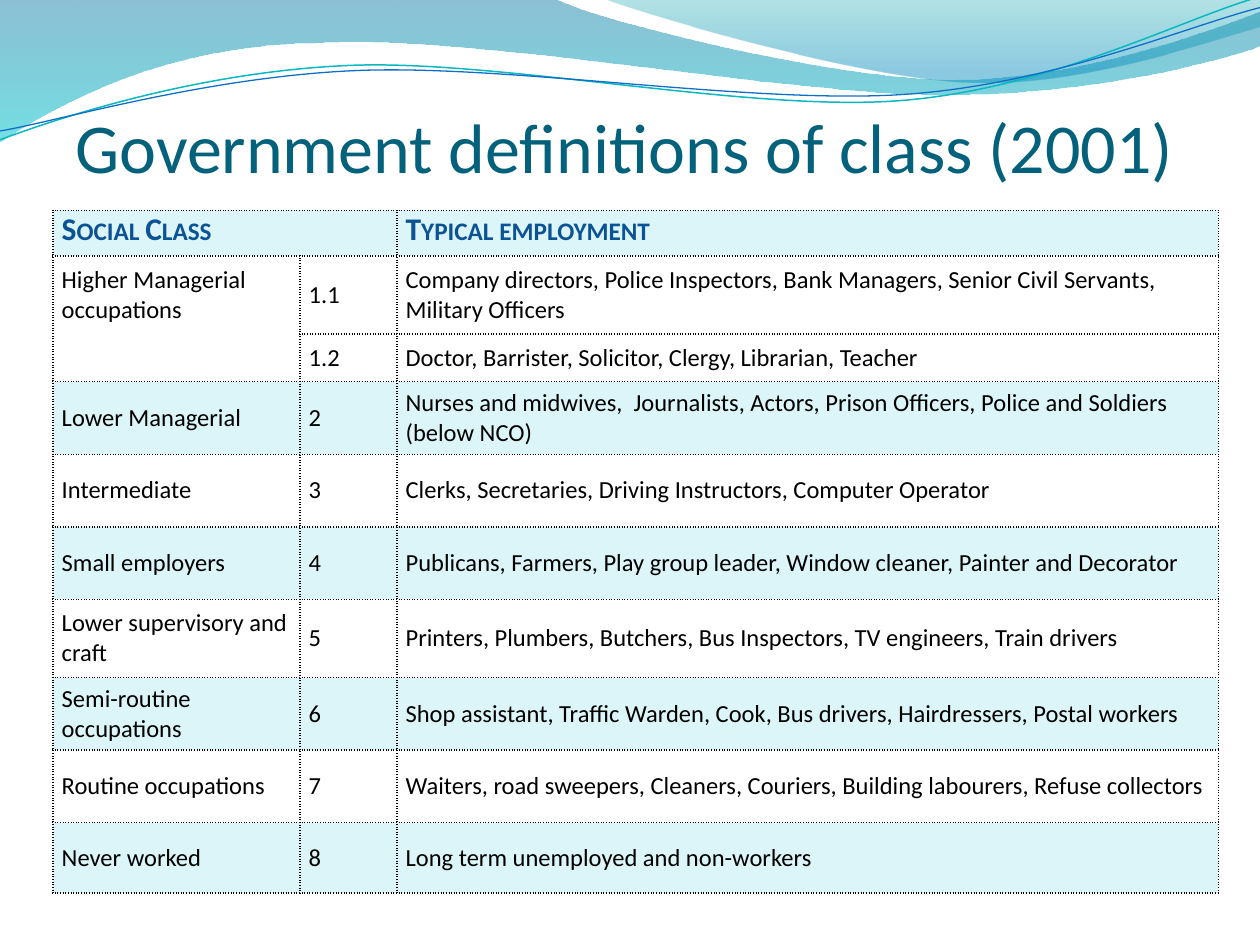
from math import cos, radians, sin

from lxml import etree
from pptx import Presentation
from pptx.dml.color import RGBColor
from pptx.enum.text import MSO_ANCHOR
from pptx.oxml.ns import qn
from pptx.util import Inches, Pt

BOTTOM, MIDDLE, TOP = MSO_ANCHOR.BOTTOM, MSO_ANCHOR.MIDDLE, MSO_ANCHOR.TOP
FONT = "Calibri"
TITLE_COLOR, HEADER_COLOR, BODY_COLOR = "04617B", "0B5394", "000000"
BAND_COLOR = "DBF5F9"

COLUMNS = [1.96, 0.77, 6.52]
STANDARD_ROW = 2.88 / 5
ROW_HEIGHTS = [0.36, 0.62, 0.38, *[STANDARD_ROW] * 3, 0.62, *[STANDARD_ROW] * 2, 0.56]
BANDED_ROWS = {0, 3, 5, 7, 9}
CLASSES = [
    ("Social Class", "", "Typical employment"),
    ("Higher Managerial occupations", "1.1",
     "Company directors, Police Inspectors, Bank Managers, Senior Civil Servants, Military Officers"),
    ("", "1.2", "Doctor, Barrister, Solicitor, Clergy, Librarian, Teacher"),
    ("Lower Managerial", "2",
     "Nurses and midwives,  Journalists, Actors, Prison Officers, Police and Soldiers (below NCO)"),
    ("Intermediate", "3", "Clerks, Secretaries, Driving Instructors, Computer Operator"),
    ("Small employers", "4",
     "Publicans, Farmers, Play group leader, Window cleaner, Painter and Decorator"),
    ("Lower supervisory and craft", "5",
     "Printers, Plumbers, Butchers, Bus Inspectors, TV engineers, Train drivers"),
    ("Semi-routine occupations", "6",
     "Shop assistant, Traffic Warden, Cook, Bus drivers, Hairdressers, Postal workers"),
    ("Routine occupations", "7",
     "Waiters, road sweepers, Cleaners, Couriers, Building labourers, Refuse collectors"),
    ("Never worked", "8", "Long term unemployed and non-workers"),
]
# Sides left open, so that neighbouring cells read as one
OPEN_SIDES = {(0, 0): "R", (0, 1): "L", (1, 0): "B", (2, 0): "T"}

# Each outline is a start point followed by straight (1 point) or cubic (3 points) steps
LEFT_WAVE = [
    [(0, -0.01)], [(4.4, -0.01)],
    [(4.76, 0.17), (6.64, 0.63), (7.58, 0.63)],
    [(8.53, 0.63), (9.58, 0.26), (10, 0.09)],
    [(10.01, 0.36)],
    [(9.83, 0.44), (8.7, 0.76), (7.46, 0.75)],
    [(6.22, 0.75), (3.82, 0.28), (2.57, 0.34)],
    [(1.29, 0.35), (0.46, 0.83), (-0.01, 1.13)],
    [(0, -0.01)],
]
RIGHT_WAVE = [
    [(4.79, -0.01)],
    [(5.09, 0.11), (6.82, 0.62), (7.69, 0.65)],
    [(8.56, 0.69), (9.61, 0.32), (10, 0.21)],
    [(10, 0)], [(4.79, -0.01)],
]
TEAL_LINE = [
    [(0, 1.11)],
    [(0.48, 0.93), (1.58, 0.57), (2.77, 0.52)],
    [(3.95, 0.47), (5.93, 0.89), (7.13, 0.8)],
    [(8.33, 0.71), (9.38, 0.15), (9.98, -0.02)],
]
BLUE_LINE = [
    [(0, 1.04)],
    [(0.47, 0.96), (1.64, 0.61), (2.83, 0.56)],
    [(4.03, 0.51), (5.97, 0.83), (7.17, 0.75)],
    [(8.36, 0.67), (9.41, 0.21), (10, 0.06)],
]
LINE_TILT = -2.7


def rgb(hex_color):
    return RGBColor.from_string(hex_color)


def turn(point, center, degrees):
    c, s = cos(radians(degrees)), sin(radians(degrees))
    dx, dy = point[0] - center[0], point[1] - center[1]
    return center[0] + dx * c - dy * s, center[1] + dx * s + dy * c


def add_outline(slide, box, outline, close, tilt=0):
    """Draw straight and cubic steps in a box that is tilted about its middle."""
    left, top, width, height = box
    right, bottom = left + width, top + height
    builder = slide.shapes.build_freeform(Inches(left), Inches(top), scale=1.0)
    builder.add_line_segments(
        [(Inches(x), Inches(y)) for x, y in ((right, top), (right, bottom), (left, bottom))])
    shape = builder.convert_to_shape()
    shape.shadow.inherit = False
    shape.rotation = tilt % 360

    route = next(shape._element.iter(qn("a:path")))
    for corner in list(route):
        route.remove(corner)
    center = (left + width / 2, top + height / 2)
    for i, step in enumerate(outline):
        kind = "moveTo" if i == 0 else "lnTo" if len(step) == 1 else "cubicBezTo"
        segment = etree.SubElement(route, qn(f"a:{kind}"))
        for point in step:
            x, y = turn(point, center, -tilt)
            etree.SubElement(segment, qn("a:pt"),
                             x=str(Inches(x - left)), y=str(Inches(y - top)))
    if close:
        etree.SubElement(route, qn("a:close"))
    return shape


def add_wave(slide, box, outline, stops):
    wave = add_outline(slide, box, outline, close=True)
    wave.line.fill.background()
    wave.fill.gradient()
    wave.fill.gradient_angle = 270
    for stop, (position, color, _) in zip(wave.fill.gradient_stops, stops):
        stop.position = position
        stop.color.rgb = rgb(color)
    colors = wave._element.spPr.iter(qn("a:srgbClr"))
    for element, (_, _, opacity) in zip(colors, stops):
        etree.SubElement(element, qn("a:alpha"), val=str(opacity * 1000))


def add_wave_line(slide, box, outline, color, width):
    curve = add_outline(slide, box, outline, close=False, tilt=LINE_TILT)
    curve.fill.background()
    curve.line.color.rgb = rgb(color)
    curve.line.width = Pt(width)


def add_wave_header(slide):
    add_wave(slide, (-0.01, -0.01, 10.02, 1.14), LEFT_WAVE,
             [(0, "0074A1", 45), (1, "00C6CF", 55)])
    add_wave(slide, (4.79, -0.01, 5.21, 0.7), RIGHT_WAVE,
             [(0, "00A1A9", 30), (0.8, "008BBF", 45)])
    add_wave_line(slide, (-0.02, 0.22, 10.02, 0.71), TEAL_LINE, "0AB8BF", 0.85)
    add_wave_line(slide, (-0.02, 0.3, 10.03, 0.58), BLUE_LINE, "0F6FC6", 0.75)


def style_text(paragraph, size, color, bold=False):
    for run in paragraph.runs:
        run.font.name = FONT
        run.font.size = Pt(size)
        run.font.bold = bold
        run.font.color.rgb = rgb(color)


def add_title(slide, left, top, width, height):
    box = slide.shapes.add_textbox(*map(Inches, (left, top, width, height)))
    frame = box.text_frame
    frame.word_wrap = True
    frame.vertical_anchor = BOTTOM
    frame.margin_left = frame.margin_right = frame.margin_bottom = 0
    frame.margin_top = Inches(0.05)
    frame.text = "Government definitions of class (2001)"
    style_text(frame.paragraphs[0], 40, TITLE_COLOR)


def set_borders(cell, open_side):
    properties = cell._tc.get_or_add_tcPr()
    for side in "LRTB":
        border = etree.SubElement(properties, qn(f"a:ln{side}"), w=str(Pt(1)))
        if side == open_side:
            etree.SubElement(border, qn("a:noFill"))
            continue
        fill = etree.SubElement(border, qn("a:solidFill"))
        etree.SubElement(fill, qn("a:srgbClr"), val=BODY_COLOR)
        etree.SubElement(border, qn("a:prstDash"), val="sysDot")


def fill_cell(cell, text, is_header, is_banded, open_side):
    set_borders(cell, open_side)
    if is_banded:
        cell.fill.solid()
        cell.fill.fore_color.rgb = rgb(BAND_COLOR)
    else:
        cell.fill.background()
    cell.margin_left = cell.margin_right = Inches(0.07)
    cell.margin_top = cell.margin_bottom = 0
    cell.vertical_anchor = TOP if is_header else MIDDLE
    paragraph = cell.text_frame.paragraphs[0]
    if not text:
        paragraph.font.size = Pt(14)
        return
    paragraph.text = text
    if is_header:
        style_text(paragraph, 18, HEADER_COLOR, bold=True)
        paragraph.runs[0].font._element.set("cap", "small")
    else:
        style_text(paragraph, 14, BODY_COLOR)


def add_class_table(slide, left, top):
    table = slide.shapes.add_table(
        len(CLASSES), len(COLUMNS), Inches(left), Inches(top),
        Inches(sum(COLUMNS)), Inches(sum(ROW_HEIGHTS))).table
    table.horz_banding = False
    for column, width in zip(table.columns, COLUMNS):
        column.width = Inches(width)
    for r, (row, height) in enumerate(zip(table.rows, ROW_HEIGHTS)):
        row.height = Inches(height)
        for c, text in enumerate(CLASSES[r]):
            fill_cell(table.cell(r, c), text, r == 0, r in BANDED_ROWS, OPEN_SIDES.get((r, c)))


def main():
    deck = Presentation()
    deck.slide_width, deck.slide_height = Inches(10), Inches(7.5)
    slide = deck.slides.add_slide(deck.slide_layouts[6])
    add_wave_header(slide)
    add_title(slide, 0.6, 0.67, 8.9, 0.82)
    add_class_table(slide, 0.42, 1.67)
    deck.save("out.pptx")


if __name__ == "__main__":
    main()
